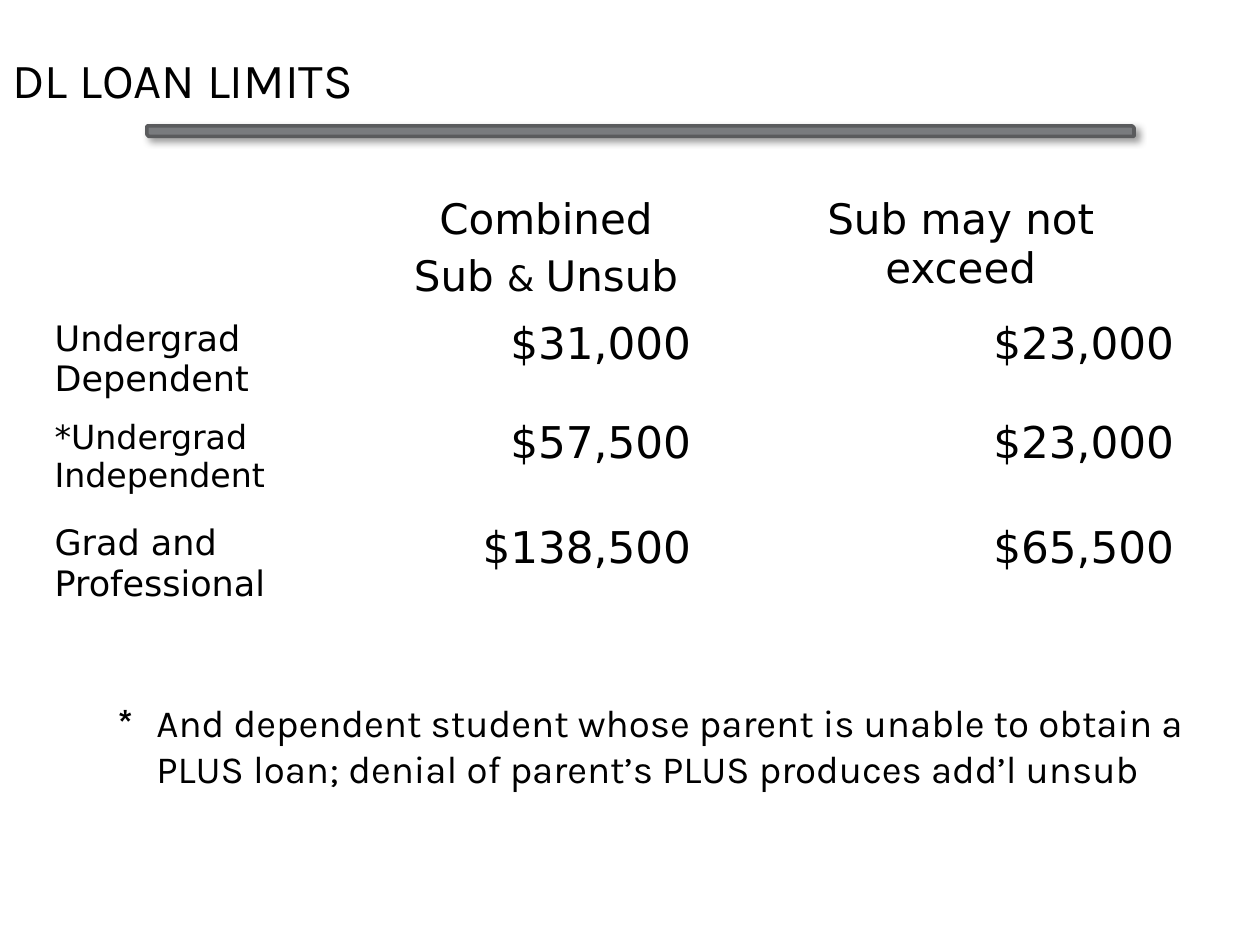
from dataclasses import dataclass

from lxml import etree
from pptx import Presentation
from pptx.dml.color import RGBColor
from pptx.enum.shapes import MSO_SHAPE
from pptx.enum.text import MSO_ANCHOR, MSO_AUTO_SIZE, PP_ALIGN
from pptx.oxml.ns import qn
from pptx.util import Emu, Inches, Pt

LEFT, CENTER, RIGHT = PP_ALIGN.LEFT, PP_ALIGN.CENTER, PP_ALIGN.RIGHT
MIDDLE = MSO_ANCHOR.MIDDLE
NO_AUTOFIT = MSO_AUTO_SIZE.NONE
SNIPPED_BAR = MSO_SHAPE.SNIP_2_DIAG_RECTANGLE
TITLE_ONLY = 5

SLIDE_WIDTH, SLIDE_HEIGHT = Inches(10), Inches(7.5)
GRID_COLUMNS, GRID_ROWS = 120, 90


@dataclass(frozen=True)
class Theme:
    text_font: str = "Karla"
    table_font: str = "DejaVu Sans"
    ink: str = "000000"
    border: str = "FFFFFF"
    bar_fill: str = "797B7E"
    bar_line: str = "5A5B5D"
    title_size: int = 28
    header_size: int = 24
    ampersand_size: int = 20
    amount_size: int = 25
    note_size: int = 22
    space_before: float = 0.2


@dataclass(frozen=True)
class Area:
    """A rectangle in grid columns and rows."""
    column: float
    row: float
    columns: float
    rows: float

    def lengths(self) -> tuple[Emu, Emu, Emu, Emu]:
        return (across(self.column), down(self.row),
                across(self.columns), down(self.rows))


@dataclass(frozen=True)
class Span:
    text: str
    size: float
    bold: bool = False


@dataclass(frozen=True)
class LoanLimit:
    borrower: str
    label_size: int
    combined: str
    subsidized: str


THEME = Theme()
TITLE_AREA = Area(0, 0, 110, 15)
BAR_AREA = Area(14, 12, 94, 1)
NOTE_AREA = Area(4, 66, 111, 12)
TABLE_COLUMNS = (33, 30, 3, 43)
TABLE_ROWS = (11.75, 9.5, 10, 9.5)
TABLE_AREA = Area(4, 18, sum(TABLE_COLUMNS), sum(TABLE_ROWS))
COMBINED_COLUMN, SUBSIDIZED_COLUMN = 1, 3

LIMITS = (
    LoanLimit("Undergrad Dependent", 20, "$31,000", "$23,000"),
    LoanLimit("*Undergrad Independent", 19, "$57,500", "$23,000"),
    LoanLimit("Grad and Professional", 20, "$138,500", "$65,500"),
)


def across(columns: float) -> Emu:
    return Emu(round(SLIDE_WIDTH * columns / GRID_COLUMNS))


def down(rows: float) -> Emu:
    return Emu(round(SLIDE_HEIGHT * rows / GRID_ROWS))


def write(frame, lines: list[list[Span]], font: str, align=LEFT) -> None:
    """Fill a text frame with one paragraph for each list of spans."""
    for index, spans in enumerate(lines):
        para = frame.add_paragraph() if index else frame.paragraphs[0]
        para.alignment = align
        if index:
            para.space_before = Pt(THEME.space_before * spans[0].size)
        for span in spans:
            run = para.add_run()
            run.text = span.text
            run.font.name = font
            run.font.size = Pt(span.size)
            run.font.bold = span.bold
            run.font.color.rgb = RGBColor.from_string(THEME.ink)


def add_title(slide, text: str) -> None:
    title = slide.shapes.title
    title.left, title.top, title.width, title.height = TITLE_AREA.lengths()
    frame = title.text_frame
    frame.auto_size = NO_AUTOFIT
    frame.vertical_anchor = MIDDLE
    write(frame, [[Span(text, THEME.title_size)]], THEME.text_font)


def add_bar_shadow(bar) -> None:
    effects = bar._element.spPr.find(qn("a:effectLst"))
    shadow = etree.SubElement(
        effects, qn("a:outerShdw"), blurRad=str(Pt(4)), dist=str(Pt(3)),
        dir=str(45 * 60000), algn="tl", rotWithShape="0")
    color = etree.SubElement(shadow, qn("a:srgbClr"), val=THEME.ink)
    etree.SubElement(color, qn("a:alpha"), val="40000")


def add_bar(slide) -> None:
    bar = slide.shapes.add_shape(SNIPPED_BAR, *BAR_AREA.lengths())
    bar.fill.solid()
    bar.fill.fore_color.rgb = RGBColor.from_string(THEME.bar_fill)
    bar.line.color.rgb = RGBColor.from_string(THEME.bar_line)
    bar.line.width = Pt(2)
    bar.shadow.inherit = False
    add_bar_shadow(bar)


def style_cell(cell) -> None:
    """Draw thin borders on all sides and leave the cell unfilled."""
    properties = cell._tc.get_or_add_tcPr()
    for side in ("a:lnL", "a:lnR", "a:lnT", "a:lnB"):
        line = etree.SubElement(properties, qn(side), w=str(Pt(1)))
        fill = etree.SubElement(line, qn("a:solidFill"))
        etree.SubElement(fill, qn("a:srgbClr"), val=THEME.border)
    cell.fill.background()


def add_limits_table(slide) -> None:
    table = slide.shapes.add_table(
        len(TABLE_ROWS), len(TABLE_COLUMNS), *TABLE_AREA.lengths()).table
    table.first_row = table.horz_banding = False
    for column, width in zip(table.columns, TABLE_COLUMNS):
        column.width = across(width)
    for row, height in zip(table.rows, TABLE_ROWS):
        row.height = down(height)
    for cell in table.iter_cells():
        style_cell(cell)

    def fill_cell(row: int, column: int, lines: list[list[Span]], align) -> None:
        write(table.cell(row, column).text_frame, lines, THEME.table_font, align)

    size = THEME.header_size
    fill_cell(0, COMBINED_COLUMN, [
        [Span("Combined", size)],
        [Span("Sub ", size), Span("& ", THEME.ampersand_size), Span("Unsub", size)],
    ], CENTER)
    fill_cell(0, SUBSIDIZED_COLUMN, [[Span("Sub may not exceed", size)]], CENTER)
    for row, limit in enumerate(LIMITS, start=1):
        fill_cell(row, 0, [[Span(limit.borrower, limit.label_size)]], LEFT)
        for column, amount in ((COMBINED_COLUMN, limit.combined),
                               (SUBSIDIZED_COLUMN, limit.subsidized)):
            fill_cell(row, column, [[Span(amount, THEME.amount_size)]], RIGHT)


def add_note(slide, text: str) -> None:
    """Add the footnote with a hanging indent after its asterisk."""
    frame = slide.shapes.add_textbox(*NOTE_AREA.lengths()).text_frame
    frame.word_wrap = True
    size = THEME.note_size
    write(frame, [[Span("*\t", size, bold=True), Span(text, size)]], THEME.text_font)
    properties = frame.paragraphs[0]._p.get_or_add_pPr()
    properties.set("marL", str(Inches(0.81)))
    properties.set("indent", str(-Inches(0.31)))


def main() -> None:
    deck = Presentation()
    deck.slide_width, deck.slide_height = SLIDE_WIDTH, SLIDE_HEIGHT
    slide = deck.slides.add_slide(deck.slide_layouts[TITLE_ONLY])
    add_title(slide, "DL LOAN LIMITS")
    add_limits_table(slide)
    add_note(slide, "And dependent student whose parent is unable to obtain a "
                    "PLUS loan; denial of parent’s PLUS produces add’l unsub")
    add_bar(slide)
    deck.save("out.pptx")


if __name__ == "__main__":
    main()
